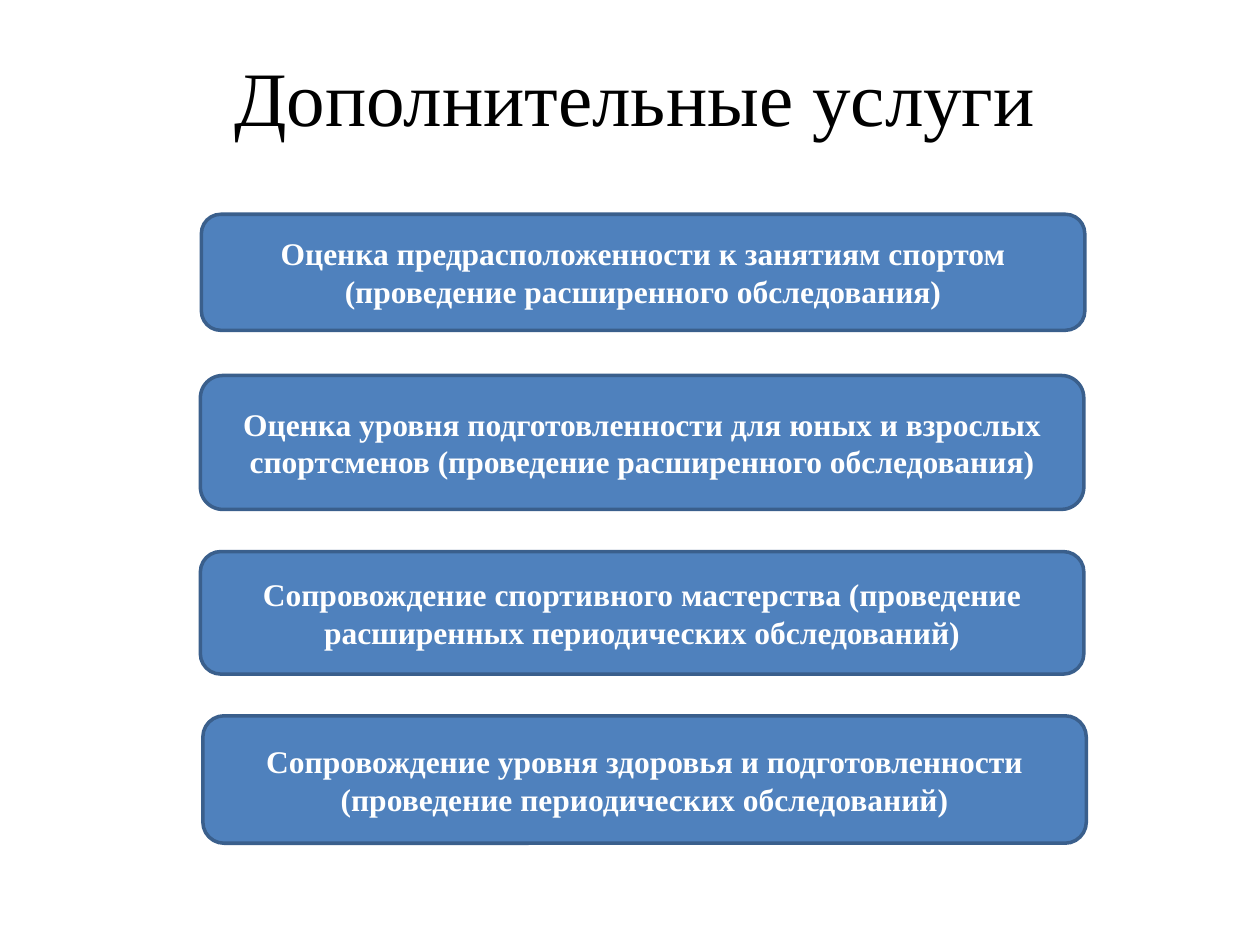
from pptx import Presentation
from pptx.dml.color import RGBColor
from pptx.enum.shapes import MSO_SHAPE
from pptx.enum.text import MSO_ANCHOR, PP_ALIGN
from pptx.util import Cm, Pt

TITLE = "Дополнительные услуги"
FONT = "Times New Roman"

# Service, left, top and height in centimetres
SERVICES = [
    ("Оценка предрасположенности к занятиям спортом (проведение расширенного обследования)",
     4.06, 4.32, 2.34),
    ("Оценка уровня подготовленности для юных и взрослых спортсменов "
     "(проведение расширенного обследования)",
     4.04, 7.57, 2.7),
    ("Сопровождение спортивного мастерства (проведение расширенных периодических обследований)",
     4.04, 11.12, 2.47),
    ("Сопровождение уровня здоровья и подготовленности (проведение периодических обследований)",
     4.09, 14.43, 2.57),
]
SERVICE_WIDTH = 17.81


def color(value):
    return RGBColor.from_string(value)


def write(box, text, size, text_color, bold=False):
    frame = box.text_frame
    frame.word_wrap = True
    frame.vertical_anchor = MSO_ANCHOR.MIDDLE
    frame.text = text
    para = frame.paragraphs[0]
    para.alignment = PP_ALIGN.CENTER
    font = para.runs[0].font
    font.name = FONT
    font.size = Pt(size)
    font.bold = bold
    font.color.rgb = color(text_color)


deck = Presentation()
deck.slide_width, deck.slide_height = Cm(25.4), Cm(19.05)
page = deck.slides.add_slide(deck.slide_layouts[6])

# Title
title = page.shapes.add_textbox(Cm(0.99), Cm(0.74), Cm(23.62), Cm(2.36))
write(title, TITLE, 44, "000000")

# Service boxes
for service, left, top, height in SERVICES:
    box = page.shapes.add_shape(MSO_SHAPE.ROUNDED_RECTANGLE,
                                Cm(left), Cm(top), Cm(SERVICE_WIDTH), Cm(height))
    box.shadow.inherit = False
    box.fill.solid()
    box.fill.fore_color.rgb = color("4F81BD")
    box.line.color.rgb = color("3A5F8C")
    box.line.width = Pt(2)
    write(box, service, 18, "FFFFFF", bold=True)

deck.save("out.pptx")
